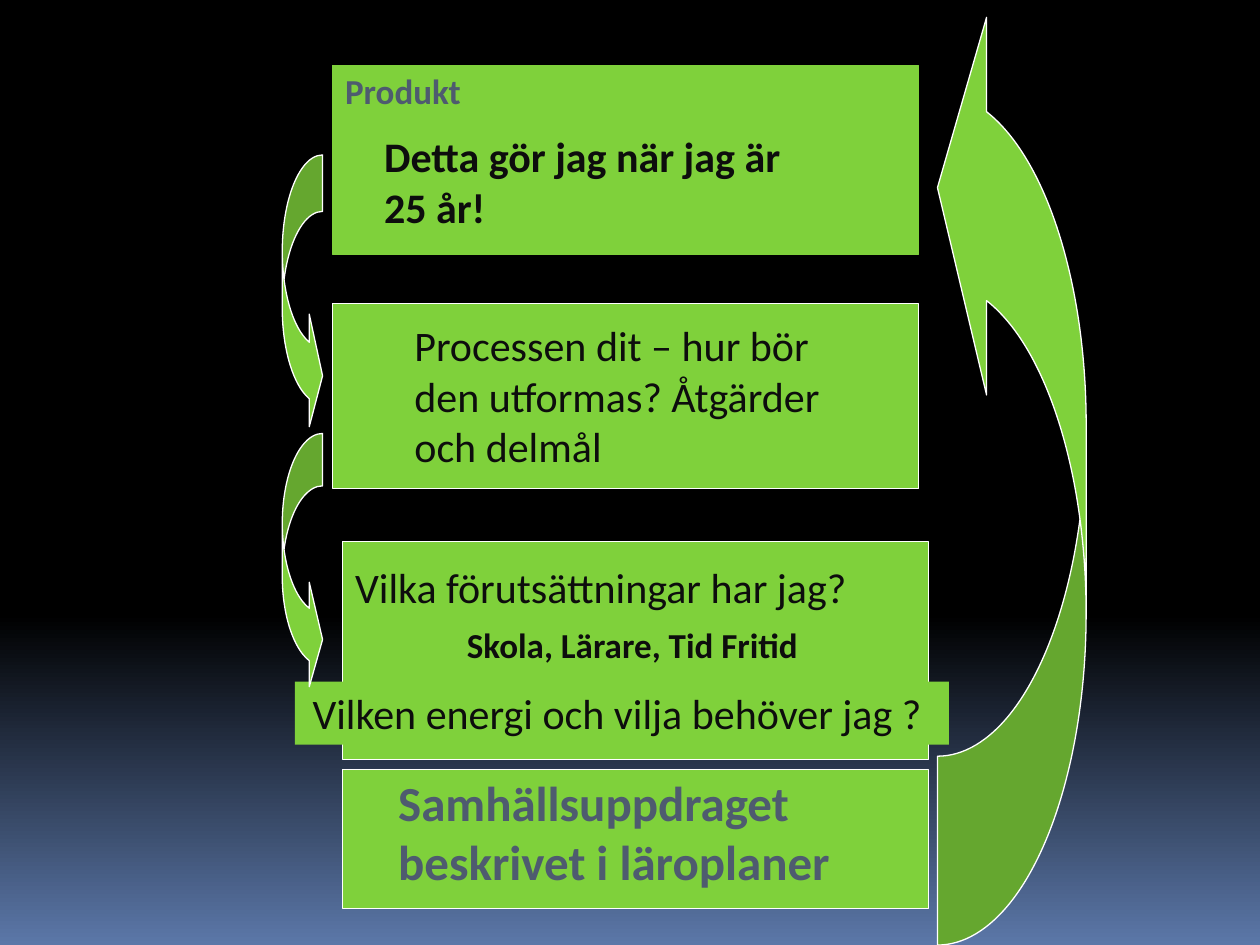
import copy
from dataclasses import dataclass

import pptx
import pptx.dml.color
import pptx.enum.shapes
import pptx.enum.text
import pptx.oxml.ns
import pptx.util

Inches = pptx.util.Inches
Pt = pptx.util.Pt
RGB = pptx.dml.color.RGBColor.from_string
Shape = pptx.enum.shapes.MSO_SHAPE
Align = pptx.enum.text.PP_ALIGN


@dataclass(frozen=True)
class Theme:
    font: str = "Calibri"
    green: RGB = RGB("7FD13B")
    white: RGB = RGB("FFFFFF")
    ink: RGB = RGB("0D0D0D")
    slate: RGB = RGB("4E5B6F")
    sky_top: RGB = RGB("000000")
    sky_bottom: RGB = RGB("5B77A8")
    label: int = 20
    body: int = 24
    heading: int = 28
    outline: float = 0.75


THEME = Theme()


def paint_background(slide):
    """Black down to 65 % of the height, then fading to blue."""
    fill = slide.background.fill
    fill.gradient()
    fill.gradient_angle = 270
    stop_list = slide.element.find(".//" + pptx.oxml.ns.qn("a:gsLst"))
    stop_list.insert(0, copy.deepcopy(stop_list[0]))
    stops = ((0, THEME.sky_top), (0.65, THEME.sky_top), (1, THEME.sky_bottom))
    for stop, (position, color) in zip(fill.gradient_stops, stops):
        stop.position = position
        stop.color.rgb = color


def add_green_shape(slide, kind, box, outline=THEME.white):
    shape = slide.shapes.add_shape(kind, *map(Inches, box))
    shape.shadow.inherit = False
    shape.fill.solid()
    shape.fill.fore_color.rgb = THEME.green
    if outline is None:
        shape.line.fill.background()
    else:
        shape.line.color.rgb = outline
        shape.line.width = Pt(THEME.outline)
    return shape


def add_curved_arrow(slide, box, adjustments, rotation=0):
    arrow = add_green_shape(slide, Shape.CURVED_RIGHT_ARROW, box)
    arrow.rotation = rotation
    for index, value in enumerate(adjustments):
        arrow.adjustments[index] = value


def write(shape, lines, size, color=THEME.ink, bold=False, align=Align.LEFT,
          left=0.1, top=0.05):
    frame = shape.text_frame
    frame.word_wrap = True
    frame.vertical_anchor = pptx.enum.text.MSO_ANCHOR.TOP
    frame.margin_left = Inches(left)
    frame.margin_top = Inches(top)
    frame.text = "\n".join(lines)
    for paragraph in frame.paragraphs:
        paragraph.alignment = align
        paragraph.font.name = THEME.font
        paragraph.font.size = Pt(size)
        paragraph.font.bold = bold
        paragraph.font.color.rgb = color


def add_text(slide, box, lines, size, **style):
    write(slide.shapes.add_textbox(*map(Inches, box)), lines, size, **style)


def main():
    deck = pptx.Presentation()
    deck.slide_width, deck.slide_height = Inches(10), Inches(7.5)
    slide = deck.slides.add_slide(deck.slide_layouts[6])
    paint_background(slide)

    add_green_shape(slide, Shape.RECTANGLE, (2.64, 0.52, 4.65, 1.5), THEME.green)
    add_green_shape(slide, Shape.RECTANGLE, (2.64, 2.41, 4.65, 1.47))
    add_green_shape(slide, Shape.RECTANGLE, (2.72, 4.3, 4.65, 1.73))
    energy = add_green_shape(slide, Shape.RECTANGLE, (2.34, 5.41, 5.19, 0.5), None)
    mission = add_green_shape(slide, Shape.RECTANGLE, (2.72, 6.11, 4.65, 1.1))

    add_text(slide, (2.64, 0.5, 1.5, 0.44), ["Produkt"], THEME.label,
             color=THEME.slate, bold=True)
    add_text(slide, (2.95, 0.99, 3.66, 0.91),
             ["Detta gör jag när jag är", "25 år!"], THEME.body, bold=True)
    add_text(slide, (3.19, 2.49, 3.72, 1.31),
             ["Processen dit – hur bör den utformas? Åtgärder och delmål"],
             THEME.body)
    add_text(slide, (2.72, 4.41, 4.54, 0.5),
             ["Vilka förutsättningar har jag?"], THEME.body)
    add_text(slide, (3.51, 4.9, 3.02, 0.44), ["Skola, Lärare, Tid Fritid"],
             THEME.label, bold=True, align=Align.CENTER)
    write(energy, ["Vilken energi och vilja behöver jag ?"], THEME.body, left=0.14)
    write(mission, ["Samhällsuppdraget", "beskrivet i läroplaner"], THEME.heading,
          color=THEME.slate, bold=True, left=0.44, top=0.02)

    add_curved_arrow(slide, (7.44, -0.01, 1.18, 7.51), (1.27, 2.54, 0.33), 180)
    add_curved_arrow(slide, (2.24, 1.23, 0.32, 2.2), (1.4, 2.79, 0.33))
    add_curved_arrow(slide, (2.24, 3.44, 0.32, 2.05), (1.3, 2.59, 0.33))

    deck.save("out.pptx")


if __name__ == "__main__":
    main()
